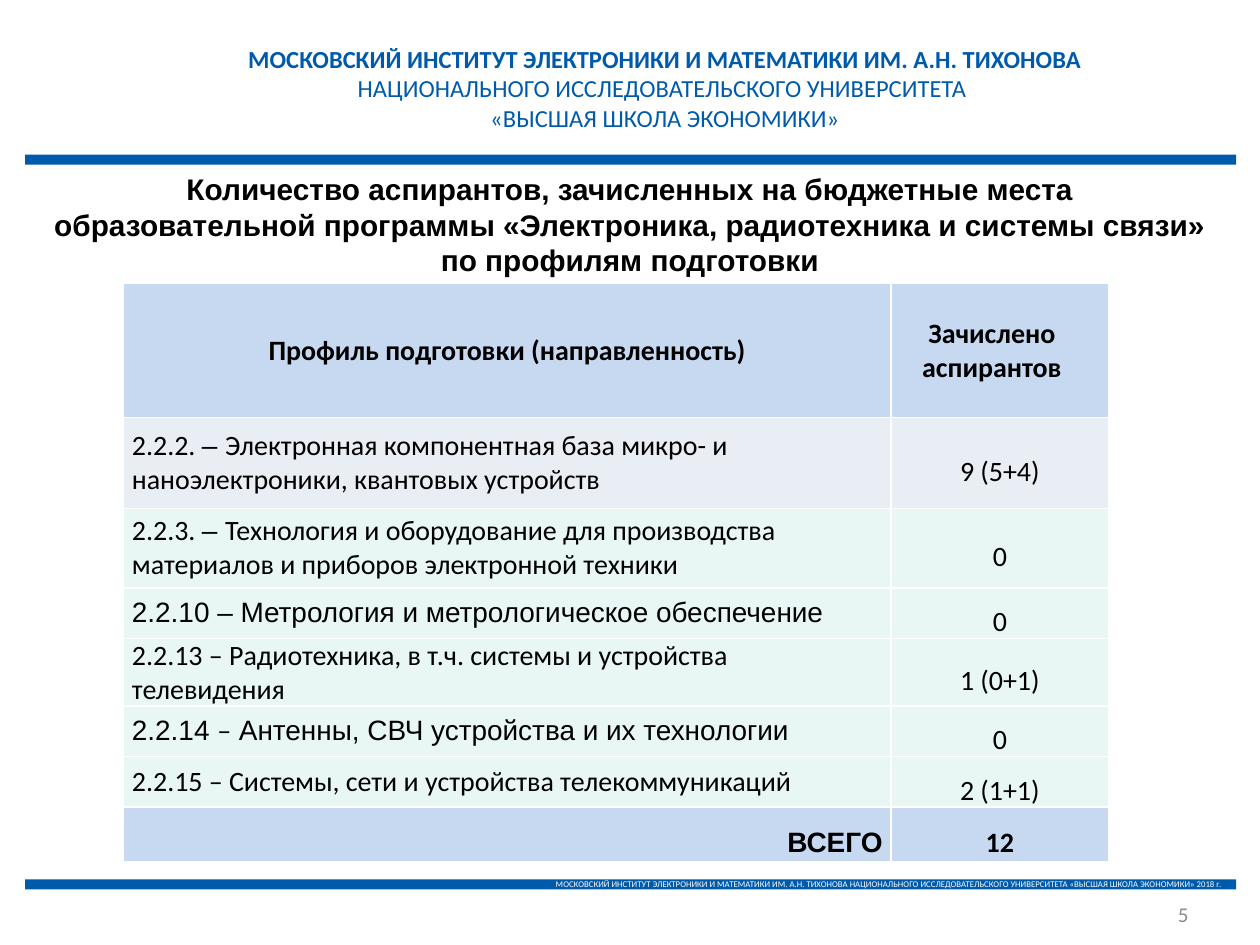
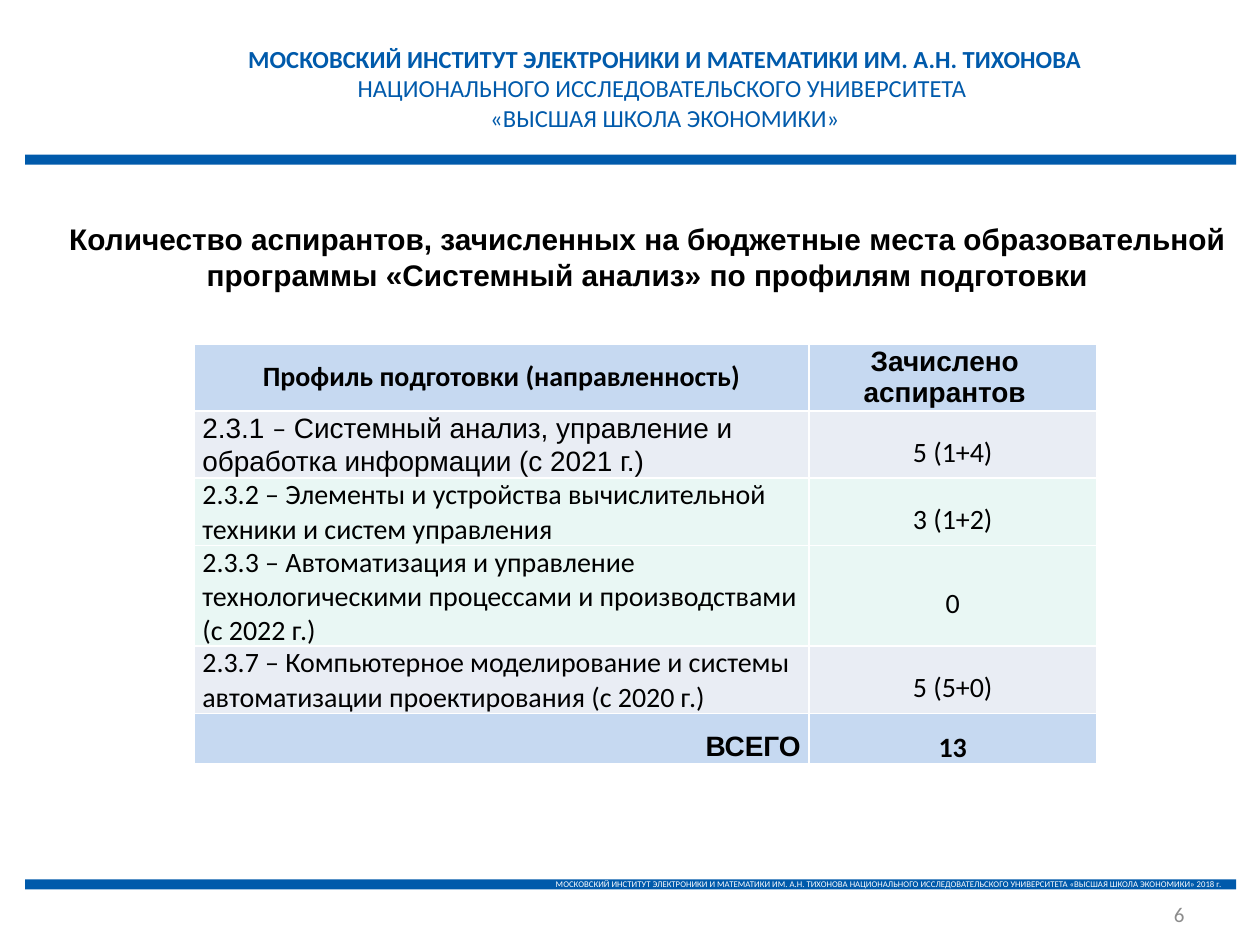
from pptx import Presentation
from pptx.dml.color import RGBColor
from pptx.enum.shapes import MSO_SHAPE
from pptx.enum.text import MSO_ANCHOR, PP_ALIGN
from pptx.util import Cm, Pt

BLUE, BLACK, WHITE, GREY = "005AAB", "000000", "FFFFFF", "8C8C8C"
HEAD_FILL, LILAC, MINT = "C6D9F1", "E9EDF4", "E9F7F4"
BODY, TITLE = "Calibri", "Arial"
LEFT, CENTER, RIGHT = PP_ALIGN.LEFT, PP_ALIGN.CENTER, PP_ALIGN.RIGHT

INSTITUTE = "МОСКОВСКИЙ ИНСТИТУТ ЭЛЕКТРОНИКИ И МАТЕМАТИКИ ИМ. А.Н. ТИХОНОВА"
UNIVERSITY = "НАЦИОНАЛЬНОГО ИССЛЕДОВАТЕЛЬСКОГО УНИВЕРСИТЕТА"
SCHOOL = "«ВЫСШАЯ ШКОЛА ЭКОНОМИКИ»"


def color(value):
    """Turn a hex string into a colour."""
    return RGBColor.from_string(value)


class SlideBuilder:
    """Holds the shared style and the slide being built."""

    def __init__(self, deck):
        """Keep the deck that receives the slides."""
        self.deck = deck
        self.slide = None

    def start(self, number, number_left):
        """Add a blank slide with the common header, bands and page number."""
        self.slide = self.deck.slides.add_slide(self.deck.slide_layouts[6])
        self.band(3.12)
        footer = self.band(17.73)
        footer.text_frame.vertical_anchor = MSO_ANCHOR.MIDDLE
        self.add_text(footer.text_frame.paragraphs[0],
                      f"{INSTITUTE} {UNIVERSITY} {SCHOOL} 2018 г.", 5, WHITE, align=RIGHT)
        header = self.text_box(4.72, 0.76, 17.37, 2.06, MSO_ANCHOR.TOP)
        self.add_text(header.paragraphs[0], INSTITUTE, 14, BLUE, bold=True, align=CENTER)
        self.add_text(header.add_paragraph(), f"{UNIVERSITY} \n{SCHOOL}", 14, BLUE,
                      align=CENTER)
        page = self.text_box(number_left, 18.14, 5.92, 0.56)
        self.add_text(page.paragraphs[0], str(number), 12, GREY, align=RIGHT)

    def band(self, top):
        """Draw a thin blue band across the slide."""
        band = self.slide.shapes.add_shape(
            MSO_SHAPE.RECTANGLE, Cm(0.51), Cm(top), Cm(24.41), Cm(0.2))
        band.shadow.inherit = False
        band.fill.solid()
        band.fill.fore_color.rgb = color(BLUE)
        band.line.fill.background()
        return band

    def text_box(self, left, top, width, height, anchor=MSO_ANCHOR.MIDDLE):
        """Add a wrapping text box and return its text frame."""
        box = self.slide.shapes.add_textbox(Cm(left), Cm(top), Cm(width), Cm(height))
        box.text_frame.word_wrap = True
        box.text_frame.vertical_anchor = anchor
        return box.text_frame

    def add_text(self, para, spans, size, ink=BLACK, bold=False, align=LEFT, font=BODY):
        """Fill a paragraph from a string or from (text, font) pairs."""
        para.alignment = align
        if isinstance(spans, str):
            spans = [(spans, font)]
        for text, face in spans:
            for index, line in enumerate(text.split("\n")):
                if index:
                    para.add_line_break()
                span = para.add_run()
                span.text = line
                span.font.name = face
                span.font.size = Pt(size)
                span.font.bold = bold
                span.font.color.rgb = color(ink)

    def title(self, left, top, width, height, lines):
        """Add the slide title, one paragraph a line."""
        frame = self.text_box(left, top, width, height)
        for index, line in enumerate(lines):
            para = frame.add_paragraph() if index else frame.paragraphs[0]
            self.add_text(para, line, 17, bold=True, align=CENTER, font=TITLE)

    def cell(self, cell, spans, fill, side=0, spacing=None, **style):
        """Set the fill, margins and text of one table cell."""
        cell.fill.solid()
        cell.fill.fore_color.rgb = color(fill)
        cell.vertical_anchor = MSO_ANCHOR.MIDDLE
        cell.margin_left = cell.margin_right = Cm(side)
        cell.margin_top = cell.margin_bottom = 0
        para = cell.text_frame.paragraphs[0]
        para.line_spacing = spacing
        self.add_text(para, spans, 16, **style)

    def table(self, left, top, widths, heights, profiles, total, head_font=BODY):
        """Add a table of profiles between a heading row and a total row."""
        table = self.slide.shapes.add_table(
            len(heights), len(widths), Cm(left), Cm(top),
            Cm(sum(widths)), Cm(sum(heights))).table
        table.first_row = table.horz_banding = False
        for column, width in zip(table.columns, widths):
            column.width = Cm(width)
        for row, height in zip(table.rows, heights):
            row.height = Cm(height)
        self.cell(table.cell(0, 0), "Профиль подготовки (направленность)", HEAD_FILL,
                  side=0.17, bold=True, align=CENTER)
        self.cell(table.cell(0, 1), "Зачислено аспирантов", HEAD_FILL,
                  bold=True, align=CENTER, font=head_font)
        table.cell(0, 1).margin_right = Cm(0.32)
        for row, (profile, count, fill) in enumerate(profiles, 1):
            self.cell(table.cell(row, 0), profile, fill, side=0.17)
            self.cell(table.cell(row, 1), count, fill, spacing=1.5, align=CENTER)
        last = len(heights) - 1
        self.cell(table.cell(last, 0), "ВСЕГО", HEAD_FILL, side=0.17, spacing=1.5,
                  bold=True, align=RIGHT, font=TITLE)
        self.cell(table.cell(last, 1), total, HEAD_FILL, spacing=1.5,
                  bold=True, align=CENTER)


def electronics_slide(builder):
    """Build the slide on electronics, radio engineering and communications."""
    builder.start(5, 18.29)
    profiles = [
        ([("2.2.2. ", BODY), ("– ", TITLE),
          ("Электронная компонентная база микро- и наноэлектроники, "
           "квантовых устройств", BODY)], "9 (5+4)", LILAC),
        ([("2.2.3. ", BODY), ("– ", TITLE),
          ("Технология и оборудование для производства материалов "
           "и приборов электронной техники", BODY)], "0", MINT),
        ([("2.2.10 – Метрология и метрологическое обеспечение", TITLE)], "0", MINT),
        ("2.2.13 – Радиотехника, в т.ч. системы и устройства телевидения",
         "1 (0+1)", MINT),
        ([("2.2.14 ", TITLE), ("–", BODY),
          (" Антенны, СВЧ устройства и их технологии", TITLE)], "0", MINT),
        ("2.2.15 – Системы, сети и устройства телекоммуникаций", "2 (1+1)", MINT),
    ]
    builder.table(2.49, 5.72, [15.47, 4.39],
                  [2.7, 1.83, 1.6, 1.02, 1.36, 1.02, 1.02, 1.11], profiles, "12")
    builder.title(0.51, 3.3, 24.38, 2.44, [
        "Количество аспирантов, зачисленных на бюджетные места",
        "образовательной программы «Электроника, радиотехника и системы связи»",
        "по профилям подготовки"])


def analysis_slide(builder):
    """Build the slide on system analysis."""
    builder.start(6, 18.21)
    profiles = [
        ([("2.3.1 ", TITLE), ("–", BODY),
          (" Системный анализ, управление и обработка информации (с 2021 г.)", TITLE)],
         "5 (1+4)", LILAC),
        ("2.3.2 – Элементы и устройства вычислительной техники и систем управления",
         "3 (1+2)", MINT),
        ("2.3.3 – Автоматизация и управление технологическими процессами "
         "и производствами (с 2022 г.)", "0", MINT),
        ("2.3.7 – Компьютерное моделирование и системы автоматизации "
         "проектирования (с 2020 г.)", "5 (5+0)", LILAC),
    ]
    builder.table(3.91, 6.93, [12.4, 5.79], [1.35, 1.35, 1.35, 2.03, 1.35, 1.02],
                  profiles, "13", head_font=TITLE)
    builder.title(1.09, 4.32, 23.93, 1.7, [
        "Количество аспирантов, зачисленных на бюджетные места образовательной "
        "программы «Системный анализ» по профилям подготовки"])


def main():
    """Build and save the deck."""
    deck = Presentation()
    deck.slide_width, deck.slide_height = Cm(25.4), Cm(19.05)
    builder = SlideBuilder(deck)
    electronics_slide(builder)
    analysis_slide(builder)
    deck.save("out.pptx")


if __name__ == "__main__":
    main()
